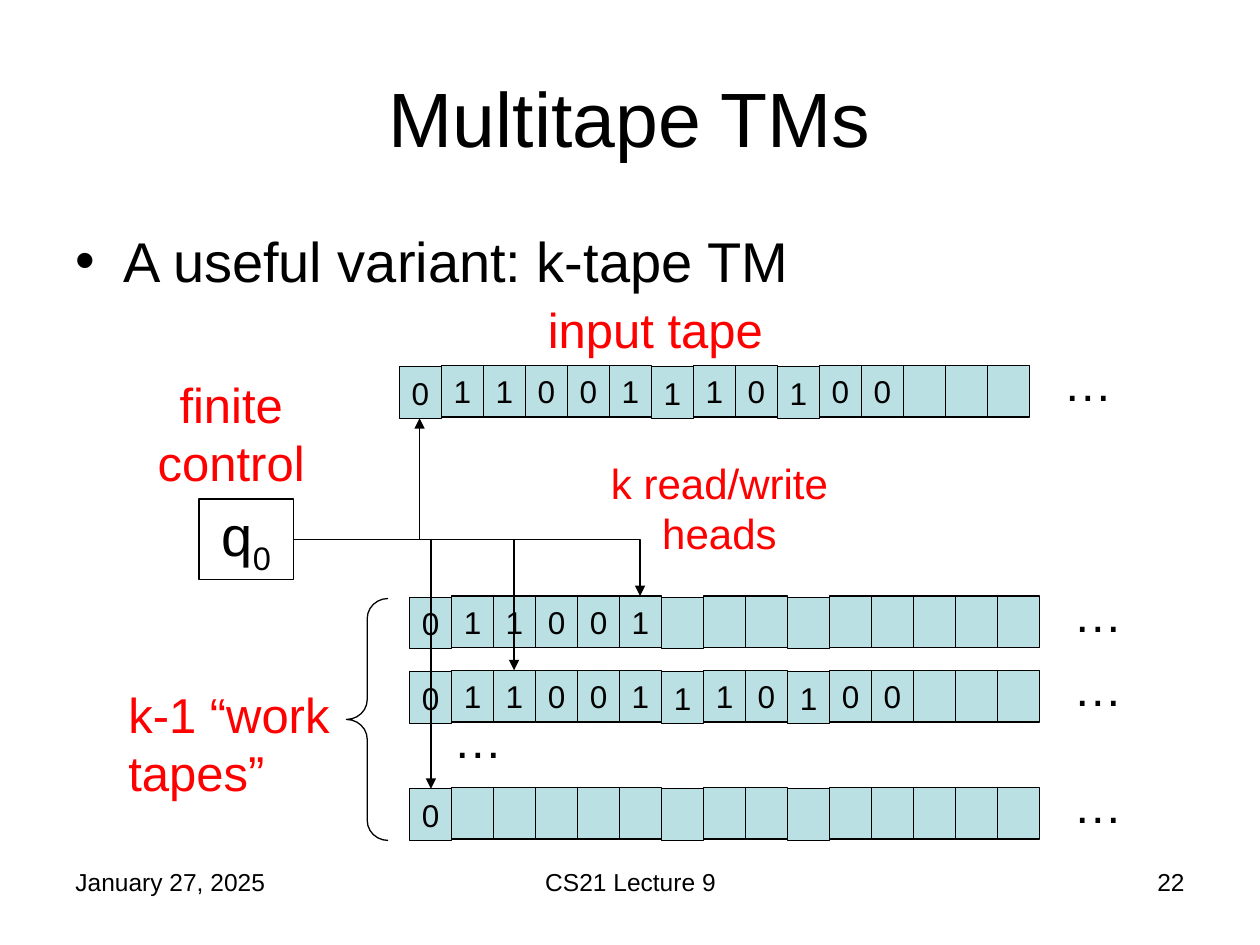
from lxml import etree
from pptx import Presentation
from pptx import util as u
from pptx.dml.color import RGBColor
from pptx.enum import shapes, text
from pptx.oxml.ns import qn

COLORS = {"ink": "000000", "label": "FF0000", "cell": "BBE0E3"}
FONT = "Arial"
CELLS = 15
TAPE_W, TAPE_H = 5, 0.41
LOWERED_CELLS = (0, 6, 9)
LEFT, CENTER, RIGHT = text.PP_ALIGN.LEFT, text.PP_ALIGN.CENTER, text.PP_ALIGN.RIGHT


def rgb(name):
    return RGBColor.from_string(COLORS[name])


def inches(*values):
    return [u.Inches(v) for v in values]


def add_run(p, words, size, color="ink"):
    r = p.add_run()
    r.text = words
    r.font.name = FONT
    r.font.size = u.Pt(size)
    r.font.color.rgb = rgb(color)
    return r


def add_label(s, box, words, size, color="ink", align=LEFT, anchor=text.MSO_ANCHOR.TOP):
    tf = s.shapes.add_textbox(*inches(*box)).text_frame
    tf.word_wrap = True
    tf.vertical_anchor = anchor
    p = tf.paragraphs[0]
    p.alignment = align
    add_run(p, words, size, color)
    return p


def add_outlined(s, kind, box, fill=None):
    sp = s.shapes.add_shape(kind, *inches(*box))
    sp.shadow.inherit = False
    if fill:
        sp.fill.solid()
        sp.fill.fore_color.rgb = rgb(fill)
    else:
        sp.fill.background()
    sp.line.color.rgb = rgb("ink")
    sp.line.width = u.Pt(0.75)
    return sp


def add_tape(s, x, y, symbols):
    """Row of cells, filled from the left, followed by an ellipsis."""
    w = TAPE_W / CELLS
    for i, symbol in enumerate(symbols.ljust(CELLS)):
        top = y + (0.01 if i in LOWERED_CELLS else 0)
        sp = add_outlined(s, shapes.MSO_SHAPE.RECTANGLE, (x + i * w, top, w, TAPE_H), "cell")
        if symbol.strip():
            tf = sp.text_frame
            tf.margin_left = tf.margin_right = 0
            tf.paragraphs[0].alignment = CENTER
            add_run(tf.paragraphs[0], symbol, 18)
    add_label(s, (x + TAPE_W + 0.17, y - 0.15, 0.75, 0.57), "…", 28)


def add_head(s, start, end):
    """Arrow that runs sideways from start, then vertically to end."""
    c = s.shapes.add_connector(shapes.MSO_CONNECTOR.ELBOW, *inches(*start, *end))
    c.line.color.rgb = rgb("ink")
    c.line.width = u.Pt(0.75)
    sp_pr = c.element.spPr
    geom = sp_pr.find(qn("a:prstGeom"))
    geom.set("prst", "bentConnector2")
    etree.SubElement(sp_pr.find(qn("a:ln")), qn("a:tailEnd"), type="triangle")
    etree.SubElement(sp_pr, qn("a:effectLst"))


def add_control(s, x, y, w, h):
    sp = add_outlined(s, shapes.MSO_SHAPE.RECTANGLE, (x, y, w, h))
    p = sp.text_frame.paragraphs[0]
    p.alignment = CENTER
    add_run(p, "q", 32)
    sub = add_run(p, "0", 32)
    sub.font._element.set("baseline", "-25000")
    add_label(s, (x - 0.66, y - 1.04, 1.83, 1.03), "finite control", 28, "label", CENTER)


def add_heading(s, x, y, w):
    add_label(s, (x, y, w, 1.25), "Multitape TMs", 44, align=CENTER,
              anchor=text.MSO_ANCHOR.MIDDLE)
    p = add_label(s, (x, y + 1.45, w, 0.83), "A useful variant: k-tape TM", 32)
    p_pr = p._p.get_or_add_pPr()
    p_pr.set("marL", str(u.Inches(0.38)))
    p_pr.set("indent", str(-u.Inches(0.38)))
    etree.SubElement(p_pr, qn("a:buFont"), typeface=FONT)
    etree.SubElement(p_pr, qn("a:buChar"), char="•")


def add_work_tapes(s, x, tapes):
    for y, symbols in tapes:
        add_tape(s, x, y, symbols)
    top, bottom = tapes[0][0], tapes[-1][0] + TAPE_H
    add_label(s, (x + 0.25, 5.58, 0.75, 0.57), "…", 28)
    add_label(s, (x - 2.33, 5.38, 1.92, 1.03), "k-1 “work tapes”", 28, "label")
    brace = add_outlined(s, shapes.MSO_SHAPE.LEFT_BRACE,
                         (x - 0.5, top + 0.02, 0.33, bottom - top - 0.01))
    brace.adjustments[0] = 0.48
    brace.adjustments[1] = 0.5


def add_footer(s, x, y, w):
    side, h = 2.33, 0.52
    add_label(s, (x, y, side, h), "January 27, 2025", 14)
    add_label(s, (x + 2.92, y, 3.17, h), "CS21 Lecture 9", 14, align=CENTER)
    add_label(s, (x + w - side, y, side, h), "22", 14, align=RIGHT)


def main():
    prs = Presentation()
    prs.slide_width, prs.slide_height = inches(10, 7.5)
    s = prs.slides.add_slide(prs.slide_layouts[6])

    add_heading(s, 0.5, 0.3, 9)
    add_label(s, (4.25, 2.33, 2.33, 0.57), "input tape", 28, "label")
    add_tape(s, 3.17, 2.9, "011001110100")
    add_control(s, 1.58, 3.96, 0.75, 0.64)
    add_label(s, (4.67, 3.58, 2.08, 0.9), "k read/write heads", 24, "label", CENTER)
    add_work_tapes(s, 3.25, [(4.73, "011001"), (5.32, "011001110100"), (6.25, "0")])
    for end in [(3.33, 3.32), (5.08, 4.73), (4.08, 5.32), (3.42, 6.26)]:
        add_head(s, (2.33, 4.28), end)
    add_footer(s, 0.5, 6.83, 9)

    prs.save("out.pptx")


if __name__ == "__main__":
    main()
